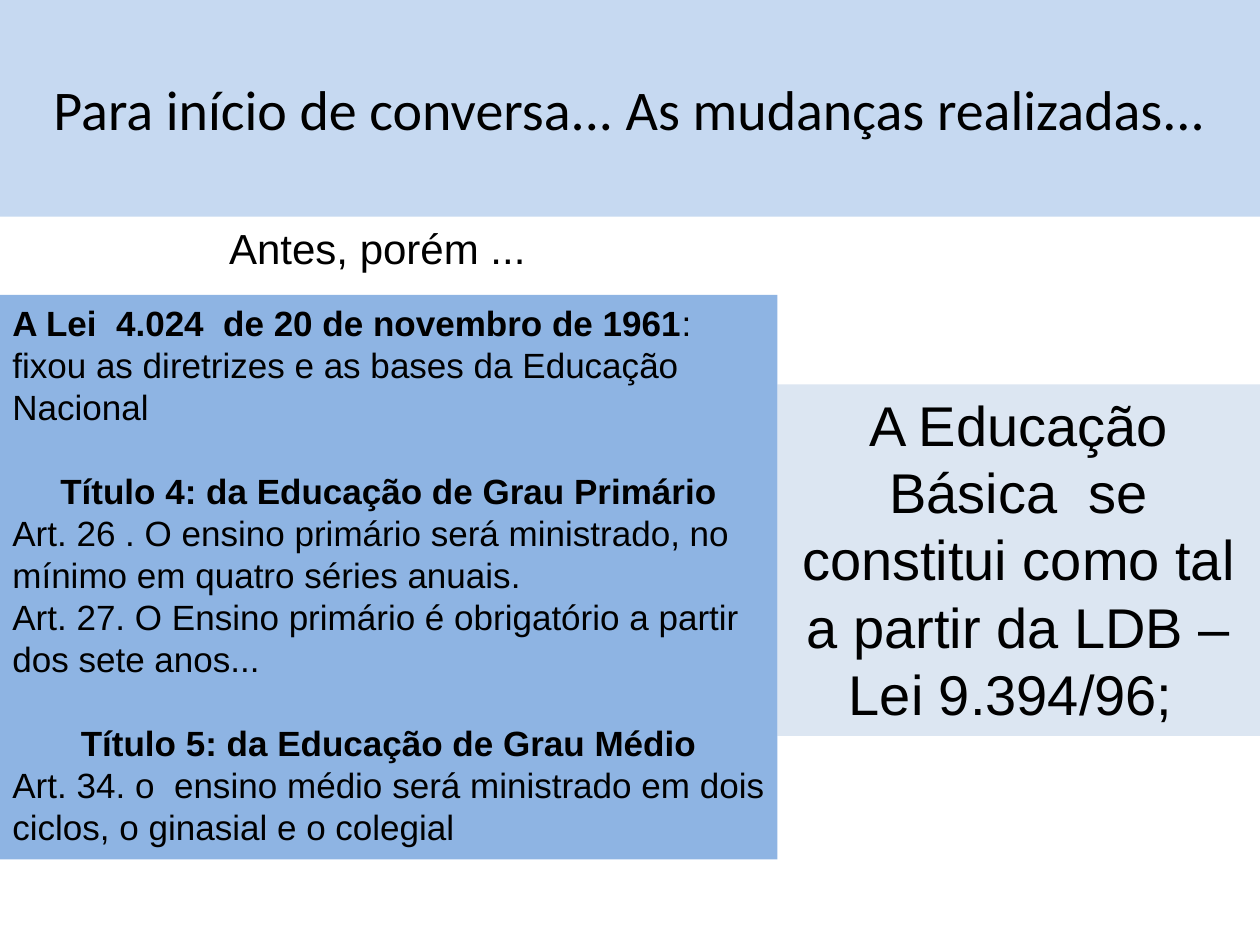
from pptx import Presentation
from pptx.dml.color import RGBColor
from pptx.enum.shapes import MSO_SHAPE
from pptx.enum.text import MSO_ANCHOR, PP_ALIGN
from pptx.util import Inches, Pt

COLORS = {"title": "C6D9F1", "law": "8EB4E3", "conclusion": "DCE6F2", "text": "000000"}
LEFT, CENTER, JUSTIFY = PP_ALIGN.LEFT, PP_ALIGN.CENTER, PP_ALIGN.JUSTIFY
SECTION_GAP = Pt(24)

# Each paragraph: alignment, starts a section, [(text, bold), ...]
LAW_TEXT = [
    (LEFT, False, [("A Lei  4.024  de 20 de novembro de 1961", True),
                   (": fixou as diretrizes e as bases da Educação Nacional", False)]),
    (CENTER, True, [("Título 4: da Educação de Grau Primário", True)]),
    (LEFT, False, [("Art. 26 . O ensino primário será ministrado, no mínimo "
                    "em quatro séries anuais.", False)]),
    (LEFT, False, [("Art. 27. O Ensino primário é obrigatório a partir "
                    "dos sete anos...", False)]),
    (CENTER, True, [("Título 5: da Educação de Grau Médio", True)]),
    (JUSTIFY, False, [("Art. 34. o  ensino médio será ministrado em dois ciclos, "
                       "o ginasial e o colegial", False)]),
]


def add_panel(slide, box, color, anchor=MSO_ANCHOR.TOP):
    """Add a filled rectangle and return its text frame."""
    panel = slide.shapes.add_shape(MSO_SHAPE.RECTANGLE, *map(Inches, box))
    panel.shadow.inherit = False
    panel.fill.solid()
    panel.fill.fore_color.rgb = RGBColor.from_string(COLORS[color])
    panel.line.fill.background()
    return set_frame(panel.text_frame, anchor)


def set_frame(frame, anchor=MSO_ANCHOR.TOP, wrap=True):
    frame.word_wrap = wrap
    frame.vertical_anchor = anchor
    frame.margin_left = frame.margin_right = Inches(0.1)
    frame.margin_top = frame.margin_bottom = Inches(0.05)
    return frame


def style(paragraph, size, align=LEFT, font="Arial"):
    paragraph.alignment = align
    paragraph.font.size = Pt(size)
    paragraph.font.name = font
    paragraph.font.color.rgb = RGBColor.from_string(COLORS["text"])


def add_title(slide, box):
    frame = add_panel(slide, box, "title", MSO_ANCHOR.MIDDLE)
    frame.text = "Para início de conversa... As mudanças realizadas..."
    style(frame.paragraphs[0], 32, CENTER, "Calibri")


def add_conclusion(slide, box):
    frame = add_panel(slide, box, "conclusion")
    frame.text = ("A Educação Básica  se constitui como tal "
                  "a partir da LDB – Lei 9.394/96; ")
    style(frame.paragraphs[0], 32, CENTER)


def add_lead_in(slide, box):
    lead_in = slide.shapes.add_textbox(*map(Inches, box))
    frame = set_frame(lead_in.text_frame, wrap=False)
    frame.text = "Antes, porém ..."
    style(frame.paragraphs[0], 24)


def add_law(slide, box):
    frame = add_panel(slide, box, "law")
    for index, (align, starts_section, pieces) in enumerate(LAW_TEXT):
        paragraph = frame.add_paragraph() if index else frame.paragraphs[0]
        style(paragraph, 20, align)
        if starts_section:
            paragraph.space_before = SECTION_GAP
        for text, bold in pieces:
            run = paragraph.add_run()
            run.text = text
            run.font.bold = bold


def main():
    presentation = Presentation()
    presentation.slide_width, presentation.slide_height = Inches(10), Inches(7.5)
    slide = presentation.slides.add_slide(presentation.slide_layouts[6])
    add_title(slide, (0, 0, 10, 1.72))
    add_conclusion(slide, (6.17, 3.05, 3.83, 2.79))
    add_lead_in(slide, (1.72, 1.72, 2.58, 0.5))
    add_law(slide, (0, 2.34, 6.17, 4.48))
    presentation.save("out.pptx")


if __name__ == "__main__":
    main()
